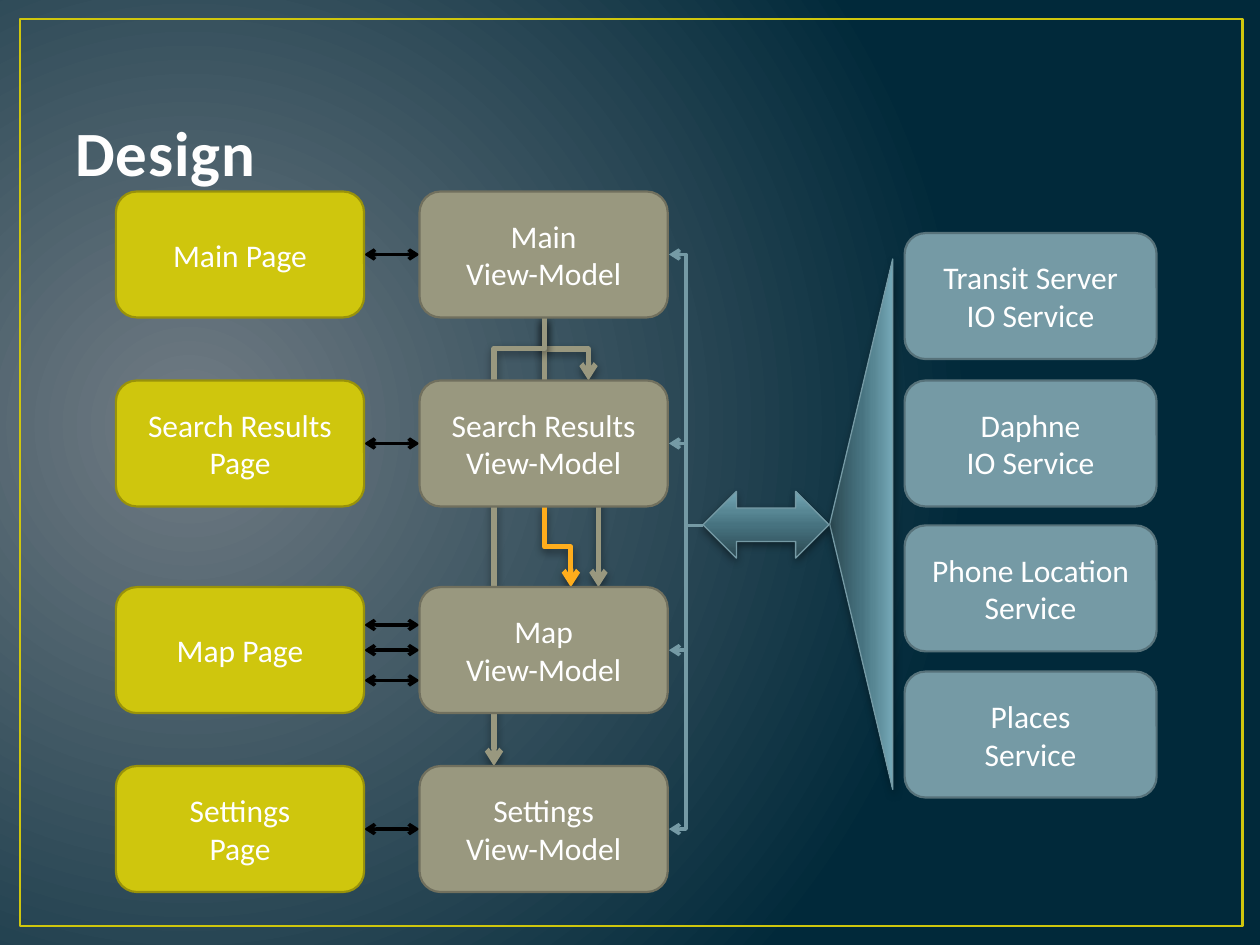
from pptx import Presentation
from pptx.dml.color import RGBColor
from pptx.enum.shapes import MSO_CONNECTOR, MSO_SHAPE
from pptx.enum.text import MSO_ANCHOR, PP_ALIGN
from pptx.oxml import parse_xml
from pptx.oxml.ns import nsdecls, qn
from pptx.util import Inches, Pt

rgb = RGBColor.from_string
NS = nsdecls("a")
SHADOW = (
    f'<a:effectLst {NS}><a:outerShdw blurRad="63500" dist="25400" dir="5400000" rotWithShape="0">'
    '<a:srgbClr val="000000"><a:alpha val="43000"/></a:srgbClr></a:outerShdw></a:effectLst>'
)


def set_gradient(fill, element, stops, direction):
    fill.gradient()
    old = next(element.iter(qn("a:gradFill")))
    colours = "".join(
        f'<a:gs pos="{at * 1000}"><a:srgbClr val="{colour}"/></a:gs>' for at, colour in stops
    )
    new = f'<a:gradFill {NS} rotWithShape="1"><a:gsLst>{colours}</a:gsLst>{direction}</a:gradFill>'
    old.getparent().replace(old, parse_xml(new))


def add_line(kind, start, end, colour, width, ends, effects):
    line = slide.shapes.add_connector(kind, *[Inches(v) for v in (*start, *end)])
    line.line.color.rgb = rgb(colour)
    line.line.width = Pt(width)
    outline = line._element.spPr.find(qn("a:ln"))
    for arrow_end in ends:
        outline.append(parse_xml(f'<a:{arrow_end} {NS} type="arrow"/>'))
    line._element.spPr.append(parse_xml(effects))
    return line


prs = Presentation()
prs.slide_width, prs.slide_height = Inches(10), Inches(7.5)
slide = prs.slides.add_slide(prs.slide_layouts[6])
set_gradient(
    slide.background.fill, slide._element, [(0, "717C84"), (100, "01293A")],
    '<a:path path="circle"><a:fillToRect l="15000" t="50000" r="85000" b="60000"/></a:path>',
)

border = slide.shapes.add_shape(
    MSO_SHAPE.RECTANGLE, Inches(0.16), Inches(0.15), Inches(9.7), Inches(7.2))
border.fill.background()
border.line.color.rgb = rgb("CFC60D")
border.line.width = Pt(1.5)
border.shadow.inherit = False

title = slide.shapes.add_textbox(Inches(0.5), Inches(0.3), Inches(9), Inches(1.25)).text_frame
title.word_wrap = True
title.vertical_anchor = MSO_ANCHOR.BOTTOM
heading = title.paragraphs[0].add_run()
heading.text = "Design"
heading.font.name = "Calibri"
heading.font.size = Pt(36)
heading.font.bold = True
heading.font.color.rgb = rgb("FEFEFE")
heading_props = heading._r.get_or_add_rPr()
heading_props.set("spc", "50")
heading_props.insert(0, parse_xml(
    f'<a:ln {NS} w="13335"><a:solidFill><a:srgbClr val="384F55"/></a:solidFill></a:ln>'))

for preset, left, top, width, height, turn in [
    (MSO_SHAPE.FLOWCHART_MERGE, 4.73, 3.91, 4.21, 0.5, 90),
    (MSO_SHAPE.LEFT_RIGHT_ARROW, 5.58, 3.9, 1, 0.53, 0),
]:
    link = slide.shapes.add_shape(
        preset, Inches(left), Inches(top), Inches(width), Inches(height))
    link.rotation = turn
    set_gradient(
        link.fill, link._element.spPr,
        [(0, "2B4851"), (50, "477380"), (70, "588794"), (100, "74A7B6")],
        '<a:lin ang="16200000" scaled="0"/>',
    )
    link.line.color.rgb = rgb("759AA5")
    link.line.width = Pt(0.75)
    link._element.spPr.append(parse_xml(SHADOW))

NO_EFFECTS = f"<a:effectLst {NS}/>"
row_tops = [1.52, 3.02, 4.66, 6.08]
row_centres = [top + 0.5 for top in row_tops]

for y in row_centres + [4.96, 5.4]:
    add_line(MSO_CONNECTOR.STRAIGHT, (3.33, y), (2.89, y), "000000", 2,
             ["headEnd", "tailEnd"], NO_EFFECTS)

for y in row_centres:
    add_line(MSO_CONNECTOR.ELBOW, (5.58, 4.17), (5.31, y), "759AA5", 2,
             ["tailEnd"], NO_EFFECTS)

for (x1, y1), (x2, y2), colour, bend in [
    ((4.32, 2.52), (4.67, 3.02), "99987F", 50000),
    ((4.32, 2.52), (4.75, 4.66), "99987F", 50000),
    ((4.32, 2.52), (3.92, 6.08), "99987F", 6900),
    ((4.32, 4.02), (4.53, 4.66), "FFAD1C", 50000),
]:
    side = 1 if x2 > x1 else -1
    middle_x, middle_y = (x1 + x2) / 2, (y1 + y2) / 2
    half_run, half_rise = side * (y2 - y1) / 2, abs(x2 - x1) / 2
    flow = add_line(
        MSO_CONNECTOR.ELBOW,
        (middle_x + half_run, middle_y - half_rise),
        (middle_x - half_run, middle_y + half_rise),
        colour, 3, ["tailEnd"], SHADOW,
    )
    properties = flow._element.spPr
    properties.find(qn("a:xfrm")).set("rot", str(-side * 5400000 % 21600000))
    properties.find(qn("a:prstGeom")).find(qn("a:avLst")).append(
        parse_xml(f'<a:gd {NS} name="adj1" fmla="val {bend}"/>'))

services = [["Transit Server", "IO Service"], ["Daphne", "IO Service"],
            ["Phone Location Service"], ["Places", "Service"]]
pages = [["Main Page"], ["Search Results Page"], ["Map Page"], ["Settings", "Page"]]
view_models = [[name, "View-Model"] for name in ("Main", "Search Results", "Map", "Settings")]

for left, width, tops, labels, colour, edge in [
    (7.18, 2, [1.85, 3.02, 4.17, 5.33], services, "759AA5", "57727A"),
    (0.92, 1.97, row_tops, pages, "CFC60D", "99920A"),
    (3.33, 1.97, row_tops, view_models, "99987F", "71705E"),
]:
    for top, label in zip(tops, labels):
        box = slide.shapes.add_shape(
            MSO_SHAPE.ROUNDED_RECTANGLE, Inches(left), Inches(top), Inches(width), Inches(1))
        box.fill.solid()
        box.fill.fore_color.rgb = rgb(colour)
        box.line.color.rgb = rgb(edge)
        box.line.width = Pt(1.25)
        box.shadow.inherit = False
        frame = box.text_frame
        frame.word_wrap = True
        frame.vertical_anchor = MSO_ANCHOR.MIDDLE
        for index, words in enumerate(label):
            paragraph = frame.add_paragraph() if index else frame.paragraphs[0]
            paragraph.alignment = PP_ALIGN.CENTER
            run = paragraph.add_run()
            run.text = words
            run.font.name = "Calibri"
            run.font.size = Pt(18)
            run.font.color.rgb = rgb("FFFFFF")

prs.save("out.pptx")
